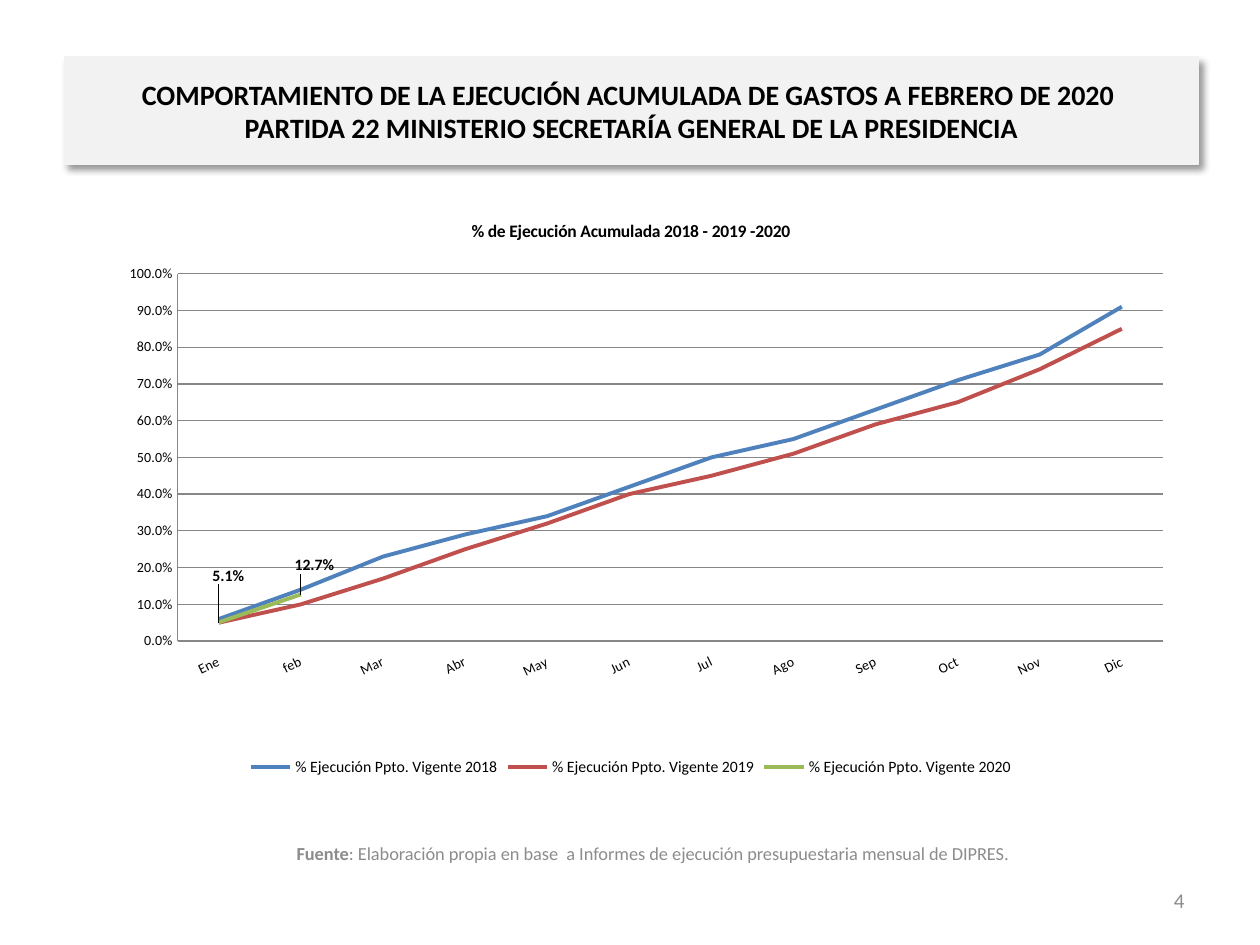
from lxml.etree import SubElement
from pptx import Presentation
from pptx.chart.data import CategoryChartData as ChartData
from pptx.dml.color import RGBColor as RGB
from pptx.enum.chart import (XL_CHART_TYPE as Kind, XL_LABEL_POSITION as Spot,
                             XL_LEGEND_POSITION as Legend,
                             XL_TICK_LABEL_POSITION as Label,
                             XL_TICK_MARK as Tick)
from pptx.enum.text import MSO_ANCHOR as Anchor, PP_ALIGN as Align
from pptx.oxml import parse_xml
from pptx.oxml.ns import nsdecls, qn
from pptx.util import Cm, Pt

BLACK = RGB(0x00, 0x00, 0x00)
GREY = RGB(0x8C, 0x8C, 0x8C)
PALE = RGB(0xF2, 0xF2, 0xF2)
RULE = RGB(0x87, 0x87, 0x87)
BLUE = RGB(0x4F, 0x81, 0xBD)
RED = RGB(0xC0, 0x50, 0x4D)
GREEN = RGB(0x9B, 0xBB, 0x59)

MONTHS = "Ene feb Mar Abr May Jun Jul Ago Sep Oct Nov Dic".split()
RATES = {
    2018: (BLUE, [.06, .14, .23, .29, .34, .42, .5, .55, .63, .71, .78, .91]),
    2019: (RED, [.05, .1, .17, .25, .32, .4, .45, .51, .59, .65, .74, .85]),
    2020: (GREEN, [.051, .127] + [None] * 10),
}
LIFTS = [-0.08, -0.05]  # label shifts, as shares of the chart height


def layout(**parts):
    """Return a manual chart layout holding the given parts."""
    node = parse_xml(f"<c:layout {nsdecls('c')}><c:manualLayout/></c:layout>")
    for name, value in parts.items():
        SubElement(node[0], qn(f"c:{name}")).set("val", str(value))
    return node


class Deck:
    """Holds the style and the current slide."""

    font = "Calibri"

    def __init__(self):
        self.prs = Presentation()
        self.prs.slide_width, self.prs.slide_height = Cm(25.4), Cm(19.05)
        self.slide = self.prs.slides.add_slide(self.prs.slide_layouts[5])

    def style(self, font, size, color=BLACK, bold=False):
        font.name, font.size, font.bold = self.font, Pt(size), bold
        font.color.rgb = color

    def title(self, text, x, y, w, h):
        box = self.slide.shapes.title
        box.left, box.top, box.width, box.height = map(Cm, (x, y, w, h))
        box.fill.solid()
        box.fill.fore_color.rgb = PALE
        box.line.color.rgb = PALE
        box.line.width = Pt(0.75)
        box.element.spPr.append(parse_xml(
            f'<a:effectLst {nsdecls("a")}><a:outerShdw blurRad="{Pt(4)}" '
            f'dist="{Pt(3)}" dir="2700000" algn="tl" rotWithShape="0">'
            '<a:srgbClr val="000000"><a:alpha val="40000"/></a:srgbClr>'
            '</a:outerShdw></a:effectLst>'))
        frame = box.text_frame
        frame.text = text
        frame.word_wrap = True
        frame.vertical_anchor = Anchor.MIDDLE
        para = frame.paragraphs[0]
        para.alignment = Align.CENTER
        self.style(para.font, 16, bold=True)

    def text(self, runs, x, y, w, h, size, align):
        """Add a line of grey text from (words, bold) pairs."""
        box = self.slide.shapes.add_textbox(*map(Cm, (x, y, w, h)))
        frame = box.text_frame
        frame.word_wrap = True
        frame.vertical_anchor = Anchor.MIDDLE
        para = frame.paragraphs[0]
        para.alignment = align
        self.style(para.font, size, GREY)
        for words, bold in runs:
            run = para.add_run()
            run.text, run.font.bold = words, bold

    def axis(self, axis):
        axis.major_tick_mark = axis.minor_tick_mark = Tick.NONE
        axis.format.line.color.rgb = RULE
        self.style(axis.tick_labels.font, 8)

    def chart(self, title, x, y, w, h):
        data = ChartData(number_format="0.0%")
        data.categories = MONTHS
        for year, (_, rates) in RATES.items():
            data.add_series(f"% Ejecución Ppto. Vigente {year}", rates)
        chart = self.slide.shapes.add_chart(
            Kind.LINE, *map(Cm, (x, y, w, h)), data).chart
        root = chart._chartSpace
        self.style(chart.font, 10)

        chart.has_title = True
        head = chart.chart_title.text_frame
        head.text = title
        self.style(head.paragraphs[0].font, 10, bold=True)

        chart.has_legend = True
        chart.legend.position = Legend.BOTTOM
        chart.legend.include_in_layout = False
        self.style(chart.legend.font, 9)

        cats, vals = chart.category_axis, chart.value_axis
        self.axis(cats)
        self.axis(vals)
        cats.tick_label_position = Label.LOW
        turn = root.find(f".//{qn('c:catAx')}/{qn('c:txPr')}/{qn('a:bodyPr')}")
        turn.set("rot", "-1560000")
        vals.minimum_scale, vals.maximum_scale = 0, 1
        vals.major_unit = 0.1
        vals.tick_labels.number_format = "0.0%"
        vals.tick_labels.number_format_is_linked = False
        vals.major_gridlines.format.line.color.rgb = RULE

        plot = chart.plots[0]
        plot.vary_by_categories = False
        for line, (color, _) in zip(plot.series, RATES.values()):
            line.smooth = False
            line.format.line.color.rgb = color
            line.format.line.width = Pt(2.25)
        self.labels(root, plot.series[-1])

        area = root.find(f".//{qn('c:plotArea')}")
        for old in area.findall(qn("c:layout")):
            area.remove(old)
        area.insert(0, layout(layoutTarget="inner", xMode="edge", yMode="edge",
                              x=0.1, y=0.13, w=0.87, h=0.63))

    def labels(self, root, line):
        for i in range(len(LIFTS)):
            label = line.points[i].data_label
            label.position = Spot.RIGHT
            self.style(label.font, 9, bold=True)
        for node, lift in zip(root.iter(qn("c:dLbl")), LIFTS):
            node.insert(1, layout(x=-0.01, y=lift))


def main():
    deck = Deck()
    deck.title("COMPORTAMIENTO DE LA EJECUCIÓN ACUMULADA DE GASTOS "
               "A FEBRERO DE 2020 \v"
               "PARTIDA 22 MINISTERIO SECRETARÍA GENERAL DE LA PRESIDENCIA",
               1.3, 1.15, 22.86, 2.16)
    deck.chart("% de Ejecución Acumulada 2018 - 2019 -2020",
               1.3, 3.99, 22.83, 11.76)
    deck.text([("Fuente", True),
               (": Elaboración propia en base  a Informes de ejecución "
                "presupuestaria mensual de DIPRES.", False)],
              2.7, 16.7, 20.93, 1.01, 10.5, Align.CENTER)
    deck.text([("4", False)], 18.2, 17.65, 5.93, 1.01, 12, Align.RIGHT)
    deck.prs.save("out.pptx")


if __name__ == "__main__":
    main()
